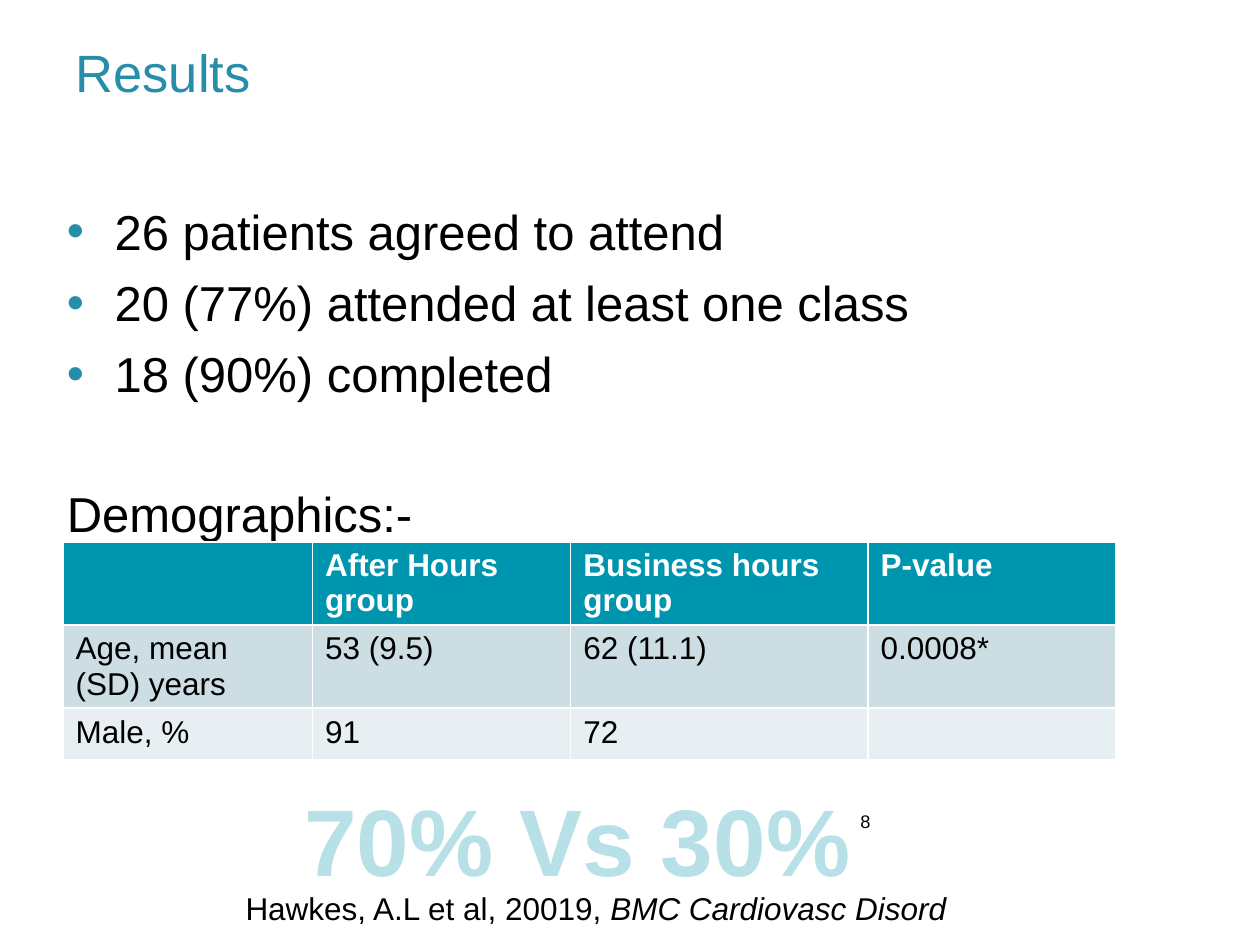
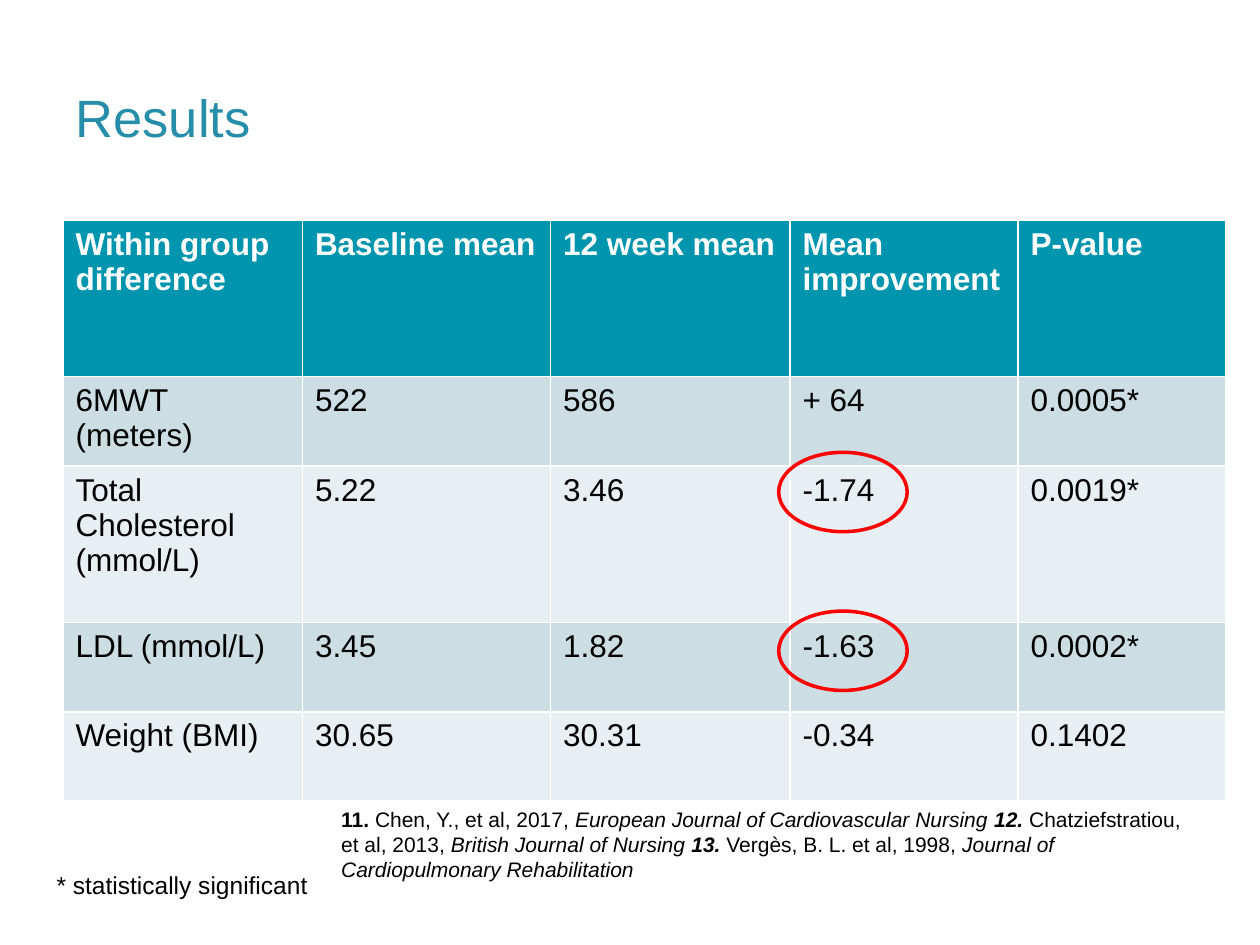
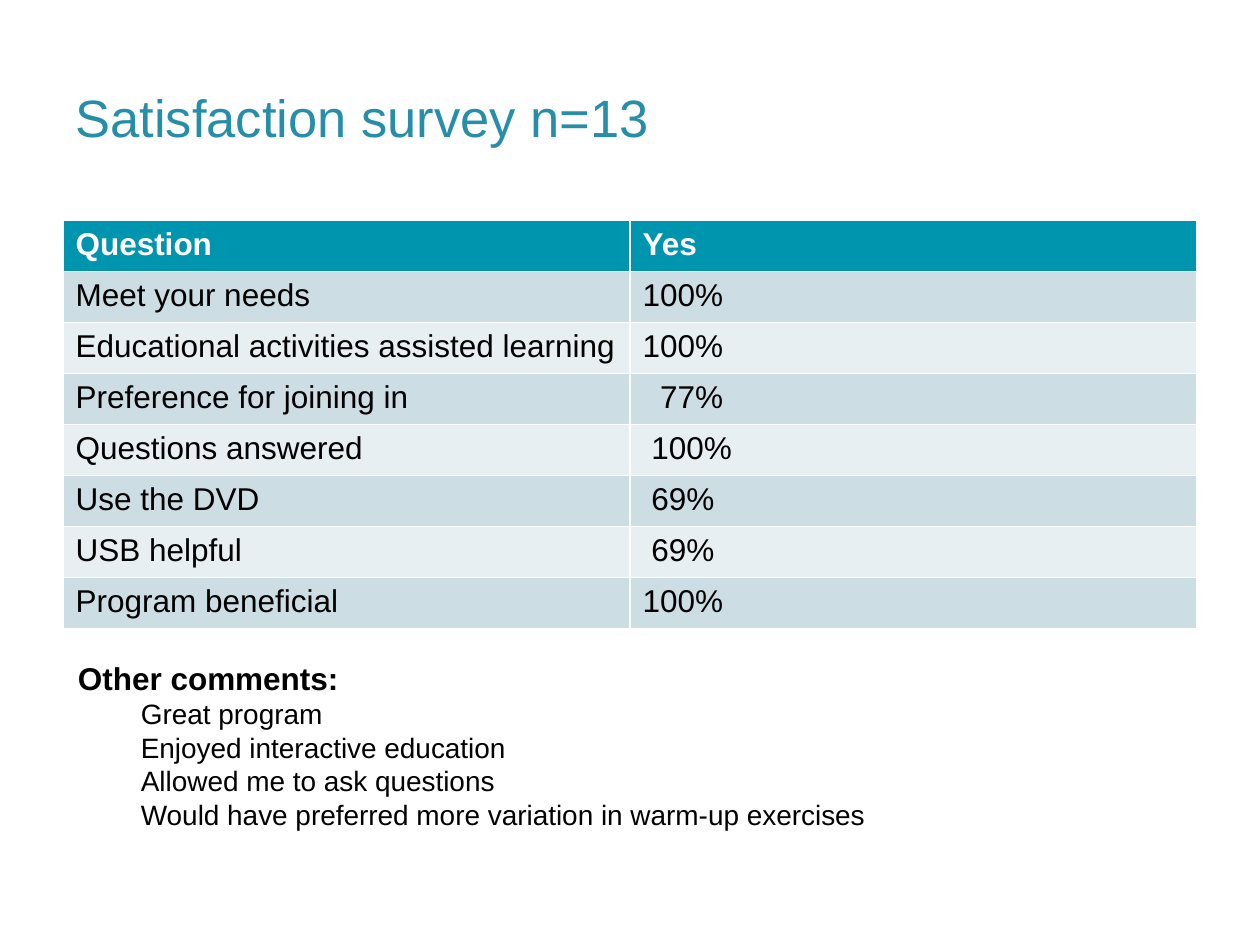
from dataclasses import dataclass

from lxml import etree
from pptx import Presentation
from pptx.dml.color import RGBColor
from pptx.enum.shapes import MSO_SHAPE
from pptx.enum.text import MSO_ANCHOR, MSO_AUTO_SIZE, PP_ALIGN
from pptx.oxml.ns import qn
from pptx.util import Inches, Pt

ELLIPSE = MSO_SHAPE.OVAL
LEFT, CENTER = PP_ALIGN.LEFT, PP_ALIGN.CENTER
TOP, MIDDLE = MSO_ANCHOR.TOP, MSO_ANCHOR.MIDDLE
NO_AUTOFIT = MSO_AUTO_SIZE.NONE
TITLE_AND_CONTENT, TITLE_ONLY = 1, 5


@dataclass(frozen=True)
class Theme:
    font: str = "Arial"
    title: str = "278EAA"
    text: str = "000000"
    white: str = "FFFFFF"
    header: str = "0095AF"
    bands: tuple = ("CCDDE3", "E7EFF2")
    ratio: str = "B7E1E7"
    ratio_outline: str = "4BB5C2"
    ring: str = "FF0000"
    ratio_size: int = 54
    title_size: int = 30
    body_size: int = 28
    table_size: int = 18
    comment_size: int = 16
    note_size: int = 14
    reference_size: int = 12


T = Theme()
SPACE_WIDTH = 0.07  # one step of inset in a table cell


# ---- Text ----
def add_color(parent, color):
    fill = etree.SubElement(parent, qn("a:solidFill"))
    etree.SubElement(fill, qn("a:srgbClr")).set("val", color)


def add_run(p, text, size=T.table_size, color=T.text, bold=False,
            italic=False, outline=None, superscript=False):
    r = p.add_run()
    r.text = text
    r.font.name = T.font
    r.font.size = Pt(size)
    r.font.bold = bold
    r.font.italic = italic
    r.font.color.rgb = RGBColor.from_string(color)
    rPr = r._r.get_or_add_rPr()
    if outline:
        ln = etree.Element(qn("a:ln"), w=str(Pt(1.75)))
        add_color(ln, outline)
        rPr.insert(0, ln)
    if superscript:
        rPr.set("baseline", "30000")


def write(p, content, align=LEFT, **fmt):
    """Fill a paragraph from a string or from (text, format) pairs."""
    p.alignment = align
    runs = [(content, {})] if isinstance(content, str) else content
    for text, own in runs:
        add_run(p, text, **{**fmt, **own})


def next_paragraph(tf, i):
    return tf.paragraphs[0] if i == 0 else tf.add_paragraph()


def set_indent(p, left, first=0, bullet=None):
    pPr = p._p.get_or_add_pPr()
    pPr.set("marL", str(Inches(left)))
    pPr.set("indent", str(Inches(first)))
    if bullet:
        clr = etree.SubElement(pPr, qn("a:buClr"))
        etree.SubElement(clr, qn("a:srgbClr")).set("val", T.title)
        etree.SubElement(pPr, qn("a:buChar")).set("char", bullet)
    else:
        etree.SubElement(pPr, qn("a:buNone"))


def place(sp, box):
    sp.left, sp.top, sp.width, sp.height = map(Inches, box)


def add_box(s, box, content, wrap=True, **fmt):
    tf = s.shapes.add_textbox(*map(Inches, box)).text_frame
    tf.word_wrap = wrap
    write(tf.paragraphs[0], content, **fmt)
    return tf


# ---- Slide parts ----
def add_slide(prs, title, layout=TITLE_ONLY, height=1.25, anchor=MIDDLE):
    s = prs.slides.add_slide(prs.slide_layouts[layout])
    for sp in list(s.placeholders):
        if sp.placeholder_format.idx > 1:
            sp.element.getparent().remove(sp.element)
    sp = s.shapes.title
    place(sp, (0.5, 0.3, 9, height))
    tf = sp.text_frame
    tf.auto_size = NO_AUTOFIT
    tf.vertical_anchor = anchor
    if anchor == TOP:
        tf.margin_top = Inches(0.02)
    write(tf.paragraphs[0], title, size=T.title_size, color=T.title)
    return s


def add_list(s, box, bullets, closing):
    sp = s.placeholders[1]
    place(sp, box)
    tf = sp.text_frame
    tf.auto_size = NO_AUTOFIT
    for i, text in enumerate(bullets):
        p = next_paragraph(tf, i)
        set_indent(p, 0.38, -0.38, "•")
        p.space_before = Pt(7 if i else 0)
        write(p, text, size=T.body_size)
    p = tf.add_paragraph()
    set_indent(p, 0)
    p.space_before = Pt(46)
    write(p, closing, size=T.body_size)


def add_table(s, top, cols, heights, rows, insets=None):
    insets = insets or {}
    table = s.shapes.add_table(
        len(rows), len(cols), Inches(0.5), Inches(top),
        Inches(sum(cols)), Inches(sum(heights))).table
    for column, width in zip(table.columns, cols):
        column.width = Inches(width)
    for i, (row, height) in enumerate(zip(rows, heights)):
        table.rows[i].height = Inches(height)
        is_header = i == 0
        for j, text in enumerate(row):
            cell = table.cell(i, j)
            cell.fill.solid()
            cell.fill.fore_color.rgb = RGBColor.from_string(
                T.header if is_header else T.bands[(i - 1) % 2])
            cell.margin_left = Inches(0.1 + SPACE_WIDTH * insets.get((i, j), 0))
            if not text:
                continue
            for n, line in enumerate(text.split("\n")):
                write(next_paragraph(cell.text_frame, n), line, bold=is_header,
                      color=T.white if is_header else T.text)


def add_ring(s, top):
    sp = s.shapes.add_shape(ELLIPSE, *map(Inches, (6.18, top, 1.02, 0.63)))
    sp.shadow.inherit = False
    sp.fill.background()
    sp.line.color.rgb = RGBColor.from_string(T.ring)
    sp.line.width = Pt(2)


# ---- Slides ----
def attendance_slide(prs):
    s = add_slide(prs, "Results", TITLE_AND_CONTENT, height=1.01, anchor=TOP)
    add_list(s, (0.43, 1.55, 9, 4.95),
             ["26 patients agreed to attend",
              "20 (77%) attended at least one class",
              "18 (90%) completed"],
             "Demographics:-")
    add_table(s, 4.3, (1.98, 2.05, 2.36, 1.97), (0.66, 0.66, 0.41), [
        ("", "After Hours group", "Business hours group", "P-value"),
        ("Age, mean (SD) years", "53 (9.5)", "62 (11.1)", "0.0008*"),
        ("Male, %", "91", "72", ""),
    ])
    add_box(s, (2.29, 6.16, 4.79, 1.01), "70% Vs 30% ", wrap=False,
            align=CENTER, size=T.ratio_size, color=T.ratio, bold=True,
            outline=T.ratio_outline)
    add_box(s, (6.73, 6.35, 0.34, 0.71), "8", superscript=True)
    add_box(s, (1.85, 7.01, 5.98, 0.4),
            [("Hawkes, A.L et al, 20019, ", {}),
             ("BMC Cardiovasc Disord", {"italic": True})])


def outcomes_slide(prs):
    s = add_slide(prs, "Results")
    add_table(s, 1.75, (1.9, 1.97, 1.9, 1.81, 1.65),
              (1.24, 0.71, 1.24, 0.71, 0.71), [
        ("Within group difference", "Baseline mean", "12 week mean",
         "Mean improvement", "P-value"),
        ("6MWT\n(meters)", "522", "586", "+ 64", "0.0005*"),
        ("Total Cholesterol (mmol/L)", "5.22", "3.46", "-1.74", "0.0019*"),
        ("LDL (mmol/L)", "3.45", "1.82", "-1.63", "0.0002*"),
        ("Weight (BMI)", "30.65", "30.31", "-0.34", "0.1402"),
    ])
    add_box(s, (0.35, 6.86, 4.89, 0.34), "* statistically significant",
            size=T.note_size)
    for top in (3.59, 4.85):
        add_ring(s, top)
    bold, italic = {"bold": True}, {"italic": True}
    both = {**bold, **italic}
    add_box(s, (2.61, 6.35, 7.03, 1.01), [
        ("11.", bold),
        (" Chen, Y., et al, 2017, ", {}),
        ("European Journal of Cardiovascular Nursing ", italic),
        ("12. ", both),
        ("Chatziefstratiou, et al, 2013, ", {}),
        ("British Journal of Nursing ", italic),
        ("13. ", both),
        ("Vergès, B. L. et al, 1998, ", {}),
        ("Journal of Cardiopulmonary Rehabilitation", italic),
    ], size=T.reference_size)


def survey_slide(prs):
    s = add_slide(prs, "Satisfaction survey n=13")
    rows = [
        ("Question", "Yes"),
        ("Meet your needs", "100%"),
        ("Educational activities assisted learning", "100%"),
        ("Preference for joining in", "77%"),
        ("Questions answered", "100%"),
        ("Use the DVD", "69%"),
        ("USB helpful", "69%"),
        ("Program beneficial", "100%"),
    ]
    add_table(s, 1.75, (4.5, 4.5), [0.405] * len(rows), rows,
              insets={(3, 1): 2, (4, 1): 1, (5, 1): 1, (6, 1): 1})
    tf = add_box(s, (0.52, 5.18, 7.87, 1.75), "Other comments:", bold=True)
    for comment in ("Great program",
                    "Enjoyed interactive education",
                    "Allowed me to ask questions",
                    "Would have preferred more variation in warm-up exercises"):
        p = tf.add_paragraph()
        p.level = 1
        set_indent(p, 0.5)
        write(p, comment, size=T.comment_size)


def main():
    prs = Presentation()
    prs.slide_width, prs.slide_height = Inches(10), Inches(7.5)
    attendance_slide(prs)
    outcomes_slide(prs)
    survey_slide(prs)
    prs.save("out.pptx")


if __name__ == "__main__":
    main()
